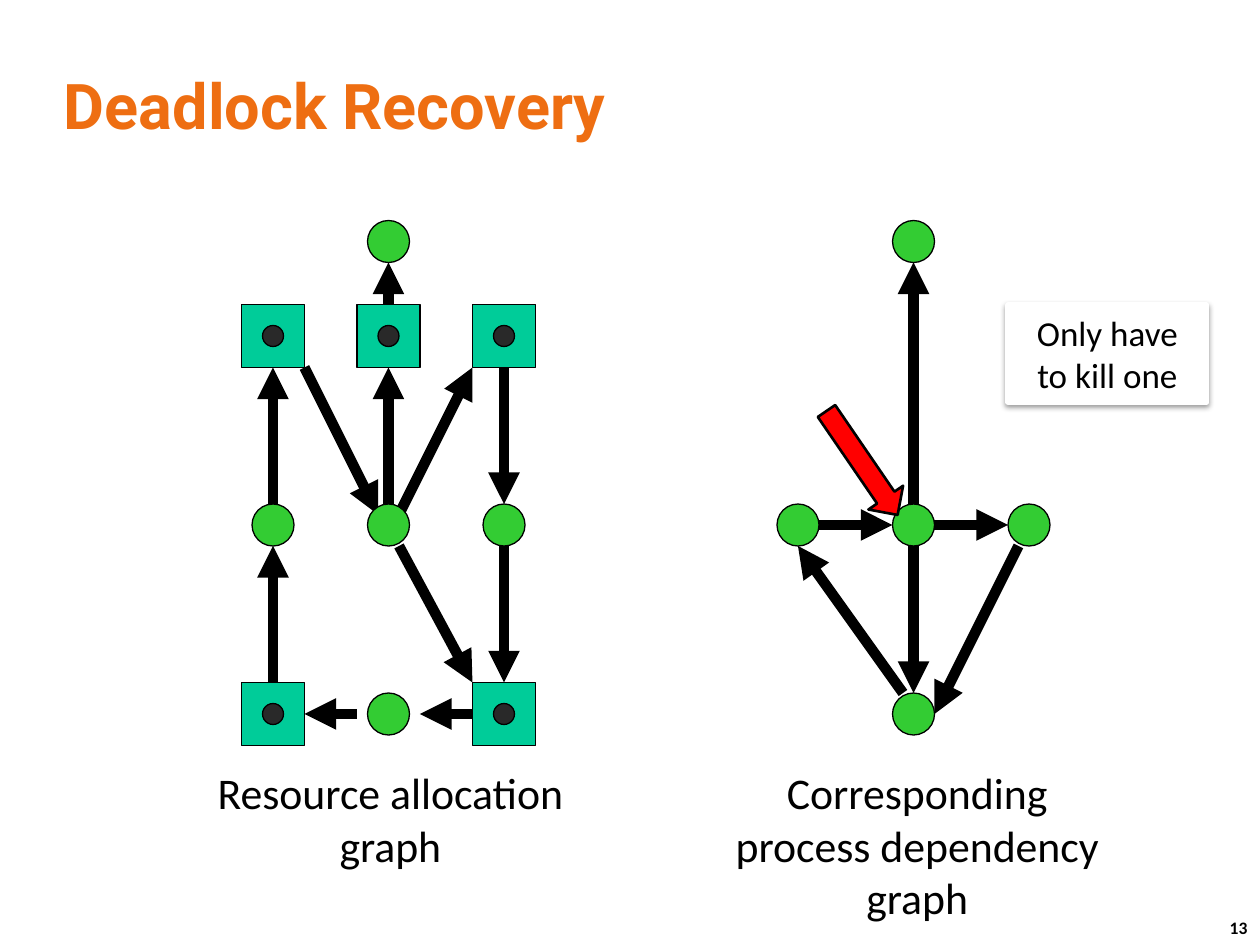
from dataclasses import dataclass

from lxml.etree import SubElement
from pptx import Presentation
from pptx.dml.color import RGBColor as Rgb
from pptx.enum.shapes import MSO_CONNECTOR as Link, MSO_SHAPE as Shape
from pptx.enum.text import MSO_ANCHOR as Anchor, PP_ALIGN as Align
from pptx.oxml.ns import qn
from pptx.util import Cm, Pt


@dataclass(frozen=True)
class Theme:
    black: Rgb = Rgb(0, 0, 0)
    white: Rgb = Rgb(255, 255, 255)
    title: Rgb = Rgb(0xEE, 0x6E, 0x12)
    process: Rgb = Rgb(0x33, 0xCC, 0x33)
    resource: Rgb = Rgb(0, 0xCC, 0x99)
    unit: Rgb = Rgb(0x29, 0x29, 0x29)
    victim: Rgb = Rgb(255, 0, 0)
    head: str = "Roboto"
    body: str = "Calibri"
    title_size: int = 36
    label_size: int = 25
    note_size: int = 20
    page_size: int = 10


THEME = Theme()
STEP = 2.54 / 12  # graph grid step in cm
COLS = (3, 14, 25)
ROWS = (2, 11, 29, 47)

# Nodes are (column, row); links are (x1, y1, x2, y2) in grid steps.
ALLOCATION = {
    "processes": [(1, 0), (0, 2), (1, 2), (2, 2), (1, 3)],
    "resources": [(0, 1), (1, 1), (2, 1), (0, 3), (2, 3)],
    "links": [
        (14, 27, 14, 14), (14, 8, 14, 4), (15, 28, 22, 14), (6, 14, 13, 28),
        (15, 31, 22, 44), (25, 31, 25, 44), (3, 44, 3, 31), (3, 27, 3, 14),
        (11, 47, 6, 47), (22, 47, 17, 47), (25, 14, 25, 27),
    ],
}
DEPENDENCY = {
    "processes": [(1, 0), (0, 2), (1, 2), (2, 2), (1, 3)],
    "resources": [],
    "links": [
        (14, 27, 14, 4), (16, 29, 23, 29), (14, 31, 14, 45),
        (13, 45, 3, 31), (5, 29, 12, 29), (24, 31, 16, 47),
    ],
}


def add_form(slide, kind, box, fill, line=THEME.black, width=0.75):
    form = slide.shapes.add_shape(kind, *map(Cm, box))
    form.shadow.inherit = False
    form.fill.solid()
    form.fill.fore_color.rgb = fill
    form.line.color.rgb = line
    form.line.width = Pt(width)
    return form


def add_node(slide, kind, x, y, size, fill):
    """Centre a node on a point; its size is in grid steps."""
    side = size * STEP
    add_form(slide, kind, (x - side / 2, y - side / 2, side, side), fill)


def add_link(slide, ends):
    line = slide.shapes.add_connector(Link.STRAIGHT, *map(Cm, ends))
    line.line.color.rgb = THEME.black
    line.line.width = Pt(6)
    props = line._element.spPr
    SubElement(props.find(qn("a:ln")), qn("a:tailEnd"), type="triangle")
    SubElement(props, qn("a:effectLst"))


def write(frame, text, size, color=THEME.black, name=THEME.body,
          bold=False, align=Align.LEFT):
    para = frame.paragraphs[0]
    para.text = text
    para.alignment = align
    font = para.font
    font.name, font.size, font.bold = name, Pt(size), bold
    font.color.rgb = color


def add_title(slide, box, text):
    frame = slide.shapes.add_textbox(*map(Cm, box)).text_frame
    frame.word_wrap = True
    frame.vertical_anchor = Anchor.MIDDLE
    write(frame, text, THEME.title_size, THEME.title, THEME.head, True)


def add_label(slide, box, text):
    frame = slide.shapes.add_textbox(*map(Cm, box)).text_frame
    frame.word_wrap = True
    frame.margin_left = frame.margin_right = Cm(0.1)
    frame.margin_top = frame.margin_bottom = 0
    write(frame, text, THEME.label_size, align=Align.CENTER)


def add_graph(slide, left, top, graph):
    """Draw links first, so that the nodes cover their ends."""
    def place(spot):
        col, row = spot
        return left + COLS[col] * STEP, top + ROWS[row] * STEP

    for x1, y1, x2, y2 in graph["links"]:
        add_link(slide, (left + x1 * STEP, top + y1 * STEP,
                         left + x2 * STEP, top + y2 * STEP))
    for spot in graph["resources"]:
        add_node(slide, Shape.RECTANGLE, *place(spot), 6, THEME.resource)
        add_node(slide, Shape.OVAL, *place(spot), 2, THEME.unit)
    for spot in graph["processes"]:
        add_node(slide, Shape.OVAL, *place(spot), 4, THEME.process)


def add_pointer(slide, left, top):
    box = (left + 3.1 * STEP, top + 21.1 * STEP, 12 * STEP, 4 * STEP)
    arrow = add_form(slide, Shape.RIGHT_ARROW, box, THEME.victim, width=1.5)
    arrow.rotation = 55.6


def add_note(slide, box, text):
    note = add_form(slide, Shape.RECTANGLE, box, THEME.white, THEME.white, 3)
    glow = SubElement(
        note._element.spPr.find(qn("a:effectLst")), qn("a:outerShdw"),
        blurRad=str(Pt(3.1)), dist=str(Pt(1.6)), dir="5400000", rotWithShape="0")
    tint = SubElement(glow, qn("a:srgbClr"), val=str(THEME.black))
    SubElement(tint, qn("a:alpha"), val="38000")
    note.text_frame.word_wrap = True
    write(note.text_frame, text, THEME.note_size, align=Align.CENTER)


def add_page(slide, box, text):
    frame = slide.shapes.add_textbox(*map(Cm, box)).text_frame
    frame.word_wrap = False
    write(frame, text, THEME.page_size, bold=True)


def main():
    deck = Presentation()
    deck.slide_width, deck.slide_height = Cm(25.4), Cm(19.05)
    slide = deck.slides.add_slide(deck.slide_layouts[6])

    top, first, second = 21 * STEP, 23 * STEP, 73 * STEP
    add_page(slide, (24.54, 18.36, 0.94, 0.69), "13")
    add_title(slide, (1.04, 1.04, 23.29, 2.11), "Deadlock Recovery")
    add_graph(slide, first, top, ALLOCATION)
    add_graph(slide, second, top, DEPENDENCY)
    add_pointer(slide, second, top)
    add_note(slide, (20.32, 6.15, 4.01, 1.96), "Only have to kill one")
    add_label(slide, (4.24, 15.44, 7.26, 2.13), "Resource allocation graph")
    add_label(slide, (14.35, 15.44, 8.28, 3.2),
              "Corresponding process dependency graph")
    deck.save("out.pptx")


if __name__ == "__main__":
    main()
